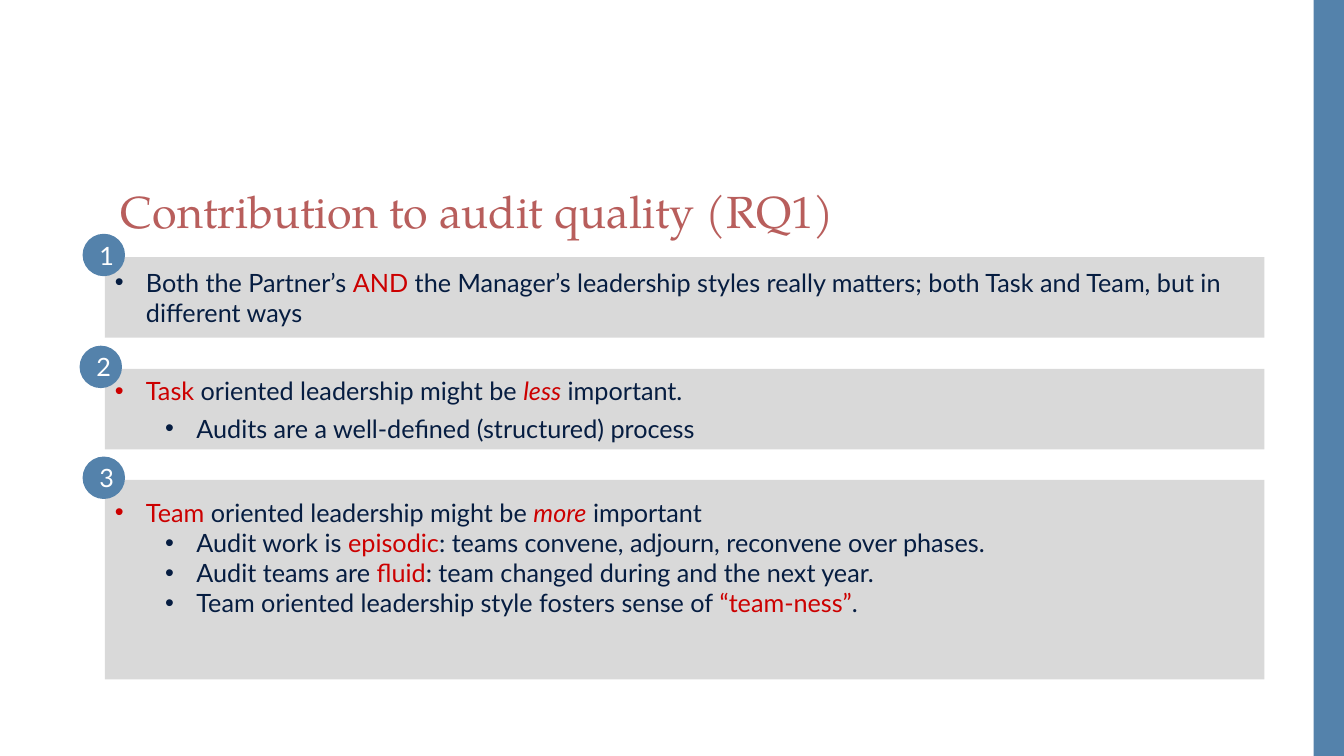
import pptx
import pptx.util
import pptx.dml.color
import pptx.enum.shapes
import pptx.enum.text
import pptx.oxml.ns
import lxml.etree

Inches = pptx.util.Inches
Pt = pptx.util.Pt
SHAPE = pptx.enum.shapes.MSO_SHAPE
ANCHOR = pptx.enum.text.MSO_ANCHOR
ALIGN = pptx.enum.text.PP_ALIGN


def color(hex_code):
    return pptx.dml.color.RGBColor.from_string(hex_code)


class FindingsSlide:
    BLUE, GRAY, NAVY, RED = "5482AB", "D9D9D9", "061D41", "CC0000"
    TITLE_COLOR, WHITE = "B85E5C", "FFFFFF"
    TITLE_FONT, BODY_FONT, BODY_SIZE = "TeX Gyre Pagella", "Lato", 18

    def __init__(self, slide):
        self.slide = slide

    def shape(self, kind, left, top, width, height, fill, outline=None):
        shape = self.slide.shapes.add_shape(
            kind, Inches(left), Inches(top), Inches(width), Inches(height))
        shape.shadow.inherit = False
        shape.fill.solid()
        shape.fill.fore_color.rgb = color(fill)
        if outline:
            shape.line.color.rgb = color(outline)
            shape.line.width = Pt(1.5)
        else:
            shape.line.fill.background()
        return shape

    def run(self, paragraph, text, ink, font=BODY_FONT, size=BODY_SIZE, italic=False):
        run = paragraph.add_run()
        run.text = text
        run.font.name = font
        run.font.size = Pt(size)
        run.font.italic = italic
        run.font.color.rgb = color(ink)

    def title(self, text, left, top, width, height):
        heading = self.slide.shapes.add_textbox(
            Inches(left), Inches(top), Inches(width), Inches(height))
        heading.text_frame.word_wrap = True
        paragraph = heading.text_frame.paragraphs[0]
        paragraph.line_spacing = 0.9
        self.run(paragraph, text, self.TITLE_COLOR, self.TITLE_FONT, 32)

    def bullet(self, paragraph, level):
        paragraph.level = level
        properties = paragraph._p.get_or_add_pPr()
        properties.set("marL", str(Inches(0.31 + 0.5 * level)))
        properties.set("indent", str(Inches(-0.31)))
        qn = pptx.oxml.ns.qn
        lxml.etree.SubElement(properties, qn("a:buFont")).set("typeface", "Arial")
        lxml.etree.SubElement(properties, qn("a:buChar")).set("char", "•")

    def panel(self, top, height, lines, space_before=0, top_inset=None):
        panel = self.shape(SHAPE.RECTANGLE, 1.04, top, 11.5, height, self.GRAY)
        frame = panel.text_frame
        frame.word_wrap = True
        frame.vertical_anchor = ANCHOR.MIDDLE
        if top_inset is not None:
            frame.vertical_anchor = ANCHOR.TOP
            frame.margin_top = Inches(top_inset)
        for index, (level, pieces) in enumerate(lines):
            paragraph = frame.add_paragraph() if index else frame.paragraphs[0]
            paragraph.alignment = ALIGN.LEFT
            self.bullet(paragraph, level)
            if index:
                paragraph.space_before = Pt(space_before)
            for text, *style in pieces:
                ink = self.RED if "red" in style else self.NAVY
                self.run(paragraph, text, ink, italic="italic" in style)

    def badge(self, number, left, top):
        badge = self.shape(SHAPE.OVAL, left, top, 0.4, 0.4, self.BLUE, self.BLUE)
        badge.text_frame.word_wrap = True
        badge.text_frame.vertical_anchor = ANCHOR.MIDDLE
        paragraph = badge.text_frame.paragraphs[0]
        paragraph.alignment = ALIGN.CENTER
        self.run(paragraph, str(number), self.WHITE)


# Each finding: top, height, badge left, lines, panel options
FINDINGS = [
    (2.55, 0.8, 0.83, [
        (0, [("Both the Partner’s ",), ("AND", "red"),
             (" the Manager’s leadership styles really matters; "
              "both Task and Team, but in different ways",)]),
    ], {}),
    (3.66, 0.8, 0.8, [
        (0, [("Task", "red"), (" oriented leadership might be ",),
             ("less", "red", "italic"), (" important.",)]),
        (1, [("Audits are a well-defined (structured) process",)]),
    ], {"space_before": 5.4}),
    (4.76, 1.98, 0.83, [
        (0, [("Team", "red"), (" oriented leadership might be ",),
             ("more", "red", "italic"), (" important",)]),
        (1, [("Audit work is ",), ("episodic", "red"),
             (": teams convene, adjourn, reconvene over phases.",)]),
        (1, [("Audit teams are ",), ("fluid", "red"),
             (": team changed during and the next year.",)]),
        (1, [("Team oriented leadership style fosters sense of ",),
             ("“team-ness”", "red"), (".",)]),
    ], {"top_inset": 0.17}),
]


def main():
    deck = pptx.Presentation()
    deck.slide_width, deck.slide_height = Inches(13.33), Inches(7.5)
    page = FindingsSlide(deck.slides.add_slide(deck.slide_layouts[6]))

    # Side band and title
    page.shape(SHAPE.RECTANGLE, 13.03, 0, 0.3, 7.5, page.BLUE)
    page.title("Contribution to audit quality (RQ1)", 1.1, 1.83, 11.18, 1.02)

    # Numbered findings
    for number, (top, height, badge_left, lines, options) in enumerate(FINDINGS, 1):
        page.panel(top, height, lines, **options)
        page.badge(number, badge_left, top - 0.22)

    deck.save("out.pptx")


if __name__ == "__main__":
    main()
